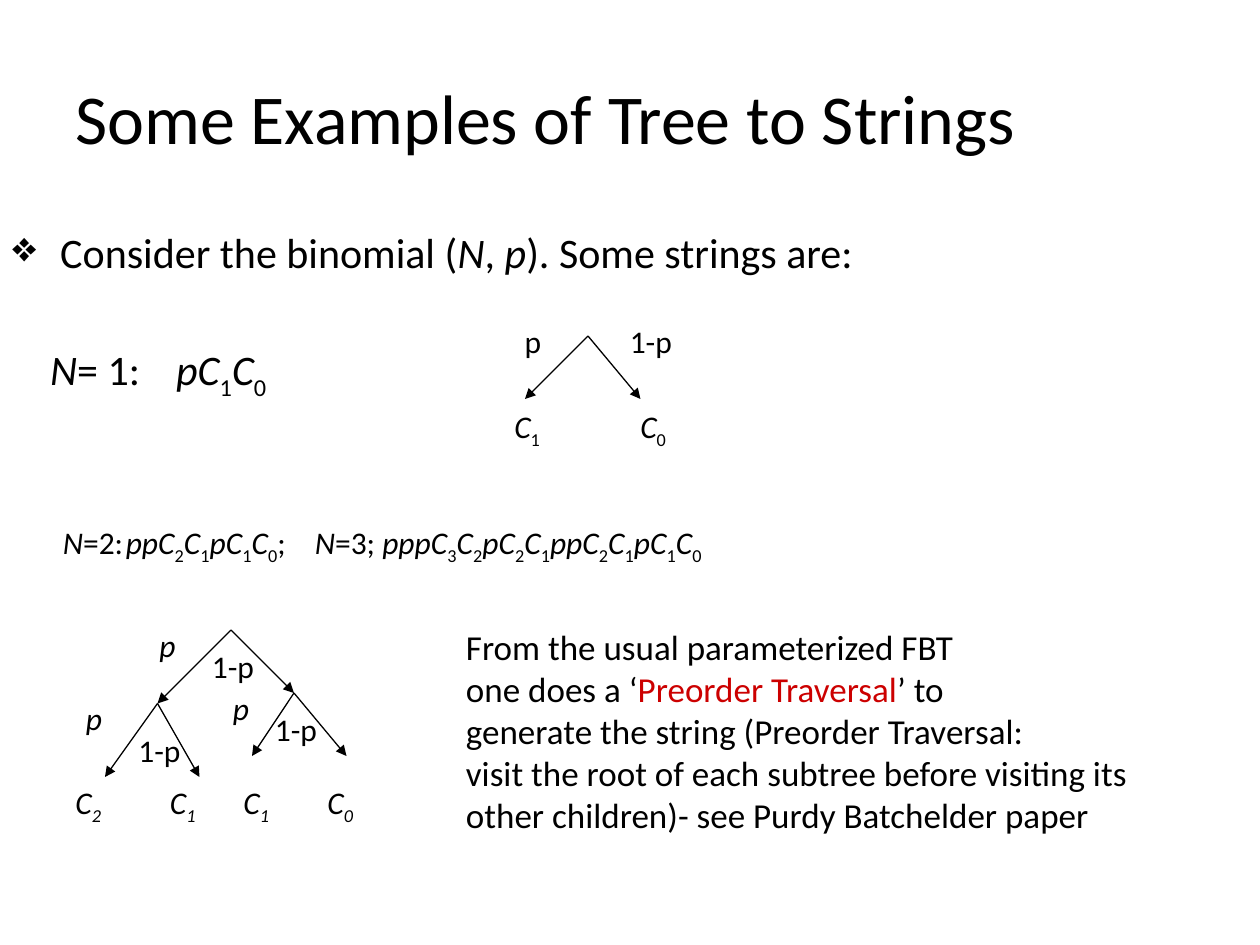
from lxml.etree import SubElement
from pptx import Presentation
from pptx.dml.color import RGBColor
from pptx.enum.shapes import MSO_CONNECTOR
from pptx.enum.text import MSO_ANCHOR
from pptx.oxml.ns import qn
from pptx.util import Inches, Pt

COLORS = {"text": "000000", "accent": "CC0000"}
FONT = "Calibri"
CELL = Inches(1) / 12  # 120 columns by 90 rows


def grid(*cells):
    return [round(cell * CELL) for cell in cells]


class TreeSlide:
    def __init__(self, presentation):
        self.slide = presentation.slides.add_slide(presentation.slide_layouts[6])

    def add_runs(self, paragraph, markup):
        """Read *italic*, |accent| and _ before a one-character subscript."""
        for accent_index, colored in enumerate(markup.split("|")):
            for italic_index, styled in enumerate(colored.split("*")):
                for index, piece in enumerate(styled.split("_")):
                    parts = [(piece[:1], True), (piece[1:], False)] if index else [(piece, False)]
                    for text, subscript in parts:
                        if not text:
                            continue
                        run = paragraph.add_run()
                        run.text = text
                        if italic_index % 2:
                            run.font.italic = True
                        if accent_index % 2:
                            run.font.color.rgb = RGBColor.from_string(COLORS["accent"])
                        if subscript:
                            run.font._element.set("baseline", "-25000")

    def text(self, column, row, columns, rows, lines, size=18, anchor=MSO_ANCHOR.TOP):
        box = self.slide.shapes.add_textbox(*grid(column, row, columns, rows))
        frame = box.text_frame
        frame.word_wrap = True
        frame.vertical_anchor = anchor
        for index, markup in enumerate(lines):
            paragraph = frame.add_paragraph() if index else frame.paragraphs[0]
            self.add_runs(paragraph, markup)
            paragraph.font.size = Pt(size)
            paragraph.font.name = FONT
            paragraph.font.color.rgb = RGBColor.from_string(COLORS["text"])
        return frame.paragraphs

    def label(self, column, row, markup):
        self.text(column, row, 7, 5, [markup])

    def layout(self, paragraph, margin=0, hanging=0, bullet=None, tabs=()):
        """Set indents, bullet and tab stops, all lengths in inches."""
        properties = paragraph._p.get_or_add_pPr()
        properties.set("marL", str(Inches(margin)))
        properties.set("indent", str(-Inches(hanging)))
        defaults = properties.find(qn("a:defRPr"))
        if bullet:
            mark = SubElement(properties, qn("a:buChar"), char=bullet)
            defaults.addprevious(mark)
        if tabs:
            stops = SubElement(properties, qn("a:tabLst"))
            for position in tabs:
                SubElement(stops, qn("a:tab"), pos=str(Inches(position)), algn="l")
            defaults.addprevious(stops)

    def branch(self, start, end):
        line = self.slide.shapes.add_connector(MSO_CONNECTOR.STRAIGHT, *grid(*start, *end))
        line.line.width = Pt(0.75)
        line.line.color.rgb = RGBColor.from_string(COLORS["text"])
        SubElement(line.line._get_or_add_ln(), qn("a:tailEnd"), type="triangle")
        SubElement(line._element.spPr, qn("a:effectLst"))

    def tree(self, branches, labels):
        for parent, children in branches:
            for child in children:
                self.branch(parent, child)
        for label in labels:
            self.label(*label)


def main():
    presentation = Presentation()
    presentation.slide_width, presentation.slide_height = Inches(10), Inches(7.5)
    slide = TreeSlide(presentation)

    slide.text(6, 3.6, 108, 15, ["Some Examples of Tree to Strings"], 40, MSO_ANCHOR.MIDDLE)
    intro, first_string = slide.text(
        0, 21, 120, 20,
        ["Consider the binomial (*N*, *p*). Some strings are:", "*N*= 1:\t*pC*_1*C*_0"], 24)
    slide.layout(intro, margin=0.38, hanging=0.38, bullet="❖")
    slide.layout(first_string, margin=0.3, tabs=[1.39])
    first_string.space_before = Pt(38)

    slide.tree(
        [((56, 32), [(50, 38), (61, 38)])],
        [(48.8, 30.1, "p"), (58.8, 30.1, "1-p"),
         (47.8, 38.2, "*C*_1"), (59.8, 38.2, "*C*_0")])

    strings = slide.text(4.8, 49.2, 111.2, 5, [
        "*N*=2:\t*ppC*_2*C*_1*pC*_1*C*_0;\t*N*=3; "
        "*pppC*_3*C*_2*pC*_2*C*_1*ppC*_2*C*_1*pC*_1*C*_0"])
    slide.layout(strings[0], tabs=[0.59, 2.03])

    root, left, right = (22, 60), (15, 67), (28, 66)
    slide.tree(
        [(root, [left, right]),
         (left, [(10, 74), (19, 74)]),
         (right, [(24, 72), (33, 72)])],
        [(7, 66, "*p*"), (14, 59, "*p*"), (21, 65, "*p*"),
         (25, 67, "1-p"), (12, 69, "1-p"), (19, 61, "1-p"),
         (6, 74, "*C_2*"), (15, 74, "*C_1*"), (22, 74, "*C_1*"), (30, 74, "*C_0*")])

    slide.text(43.2, 59, 66, 21.4, [
        "From the usual parameterized FBT",
        "one does a ‘|Preorder Traversal|’ to",
        "generate the string (Preorder Traversal:",
        "visit the root of each subtree before visiting its",
        "other children)- see Purdy Batchelder paper"], 20)

    presentation.save("out.pptx")


if __name__ == "__main__":
    main()
